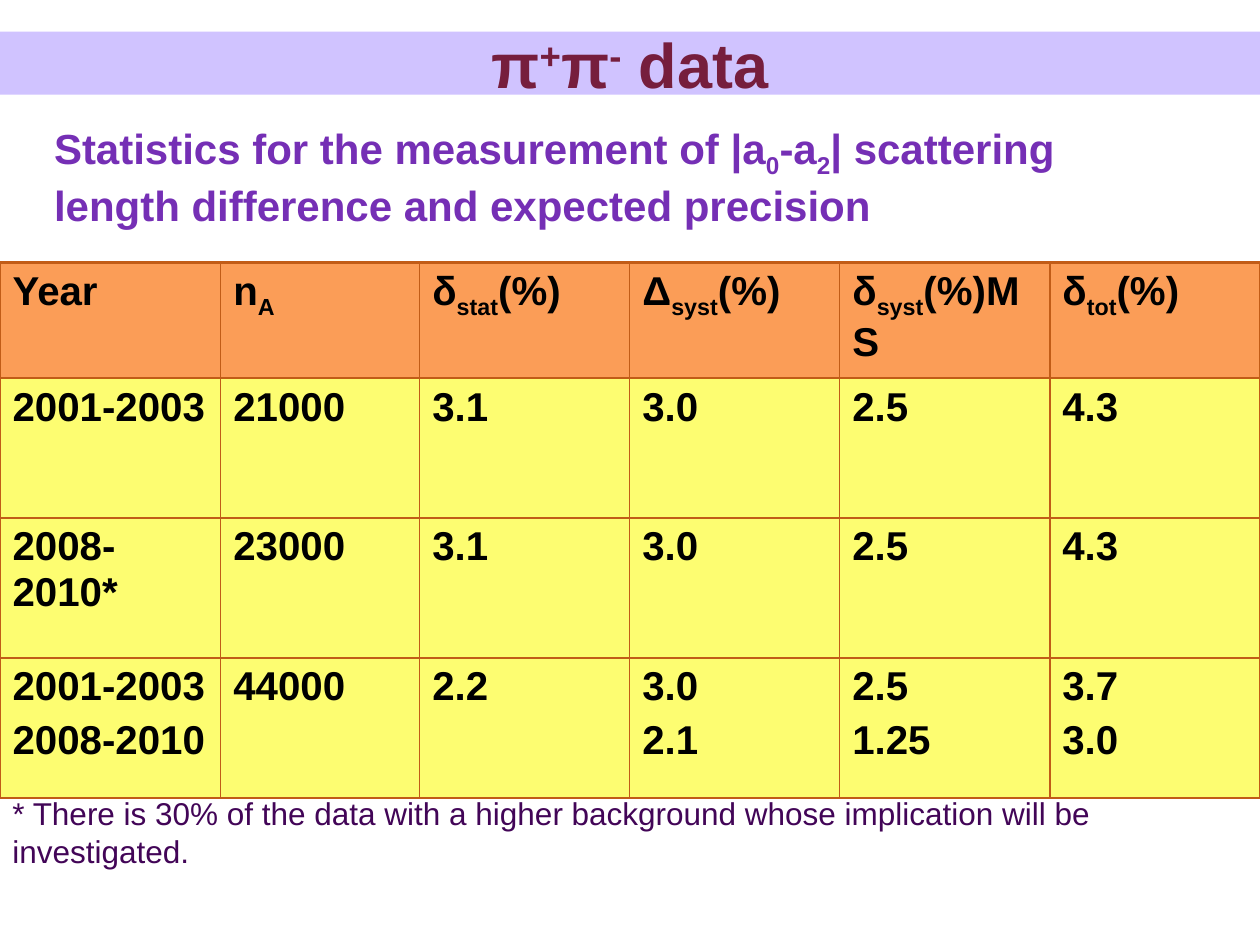
from lxml.etree import SubElement
from pptx import Presentation
from pptx.dml.color import RGBColor as RGB
from pptx.enum.shapes import MSO_SHAPE as SHAPE
from pptx.enum.text import MSO_ANCHOR as ANCHOR, MSO_AUTO_SIZE as FIT, PP_ALIGN as ALIGN
from pptx.oxml.ns import qn
from pptx.util import Cm, Pt

COLORS = {"band": "D0C3FF", "title": "761E3D", "subtitle": "752FB5", "note": "420557",
          "text": "000000", "head": "FB9D57", "body": "FDFD71", "border": "C15C17"}

SHIFT = "~"
TITLE = "π~+~π~-~ data"
SUBTITLE = ("Statistics for the measurement of |a~0~-a~2~| scattering "
            "length difference and expected precision")
NOTE = ("* There is 30% of the data with a higher background "
        "whose implication will be investigated.")
ROWS = [
    ["Year", "n~A~", "δ~stat~(%)", "Δ~syst~(%)", "δ~syst~(%)MS", "δ~tot~(%)"],
    ["2001-2003", "21000", "3.1", "3.0", "2.5", "4.3"],
    ["2008-2010*", "23000", "3.1", "3.0", "2.5", "4.3"],
    ["2001-2003\n2008-2010", "44000", "2.2", "3.0\n2.1", "2.5\n1.25", "3.7\n3.0"],
]

FORMATS = {
    "title": {"size": Pt(36), "bold": True},
    "subtitle": {"size": Pt(24), "bold": True},
    "text": {"size": Pt(23), "bold": True},
    "note": {"size": Pt(18), "bold": False},
}

WIDTH, HEIGHT = 25.4, 19.05
YEAR_W, COUNT_W = 4.45, 4.01
HEAD_H, BODY_H = 2.2, 2.82
TABLE_TOP = 5.29


def write(p, text, style, baseline=-25000):
    for i, part in enumerate(text.split(SHIFT)):
        r = p.add_run()
        r.text = part
        for name, value in {"name": "Arial", **FORMATS[style]}.items():
            setattr(r.font, name, value)
        r.font.color.rgb = RGB.from_string(COLORS[style])
        if i % 2:
            r._r.get_or_add_rPr().set("baseline", str(baseline))


def add_text(slide, box, text, style):
    tf = slide.shapes.add_textbox(*map(Cm, box)).text_frame
    tf.word_wrap = True
    tf.auto_size = FIT.SHAPE_TO_FIT_TEXT
    write(tf.paragraphs[0], text, style)


def add_title(slide):
    sp = slide.shapes.add_shape(SHAPE.RECTANGLE, *map(Cm, (0, 0.64, WIDTH, 1.27)))
    sp.shadow.inherit = False
    sp.fill.solid()
    sp.fill.fore_color.rgb = RGB.from_string(COLORS["band"])
    sp.line.fill.background()
    tf = sp.text_frame
    tf.vertical_anchor = ANCHOR.MIDDLE
    p = tf.paragraphs[0]
    p.alignment = ALIGN.CENTER
    write(p, TITLE, "title", 30000)


def set_borders(cell, outer):
    tcPr = cell._tc.get_or_add_tcPr()
    for i, (side, is_outer) in enumerate(outer.items()):
        ln = SubElement(tcPr, qn("a:ln" + side), w=str(Pt(1.5 if is_outer else 1)))
        fill = SubElement(ln, qn("a:solidFill"))
        SubElement(fill, qn("a:srgbClr"), val=COLORS["border"])
        tcPr.insert(i, ln)


def add_data_table(slide):
    n_rows, n_cols = len(ROWS), len(ROWS[0])
    heights = [HEAD_H] + [BODY_H] * (n_rows - 1)
    rest = (WIDTH - YEAR_W - COUNT_W) / (n_cols - 2)
    widths = [YEAR_W, COUNT_W] + [rest] * (n_cols - 2)
    table = slide.shapes.add_table(
        n_rows, n_cols, *map(Cm, (0, TABLE_TOP, WIDTH, sum(heights)))).table
    for col, width in zip(table.columns, widths):
        col.width = Cm(width)
    for i, (row, height) in enumerate(zip(table.rows, heights)):
        row.height = Cm(height)
        for j, cell in enumerate(row.cells):
            cell.fill.solid()
            cell.fill.fore_color.rgb = RGB.from_string(COLORS["body" if i else "head"])
            set_borders(cell, {"L": j == 0, "R": j == n_cols - 1,
                               "T": i == 0, "B": i == n_rows - 1})
            tf = cell.text_frame
            for k, line in enumerate(ROWS[i][j].split("\n")):
                p = tf.add_paragraph() if k else tf.paragraphs[0]
                p.space_before = Pt(4.6)
                write(p, line, "text")


def main():
    prs = Presentation()
    prs.slide_width, prs.slide_height = Cm(WIDTH), Cm(HEIGHT)
    slide = prs.slides.add_slide(prs.slide_layouts[6])
    add_title(slide)
    add_text(slide, (0.84, 2.34, 23.06, 2.31), SUBTITLE, "subtitle")
    add_data_table(slide)
    add_text(slide, (0, 15.88, WIDTH, 1.02), NOTE, "note")
    prs.save("out.pptx")


if __name__ == "__main__":
    main()
